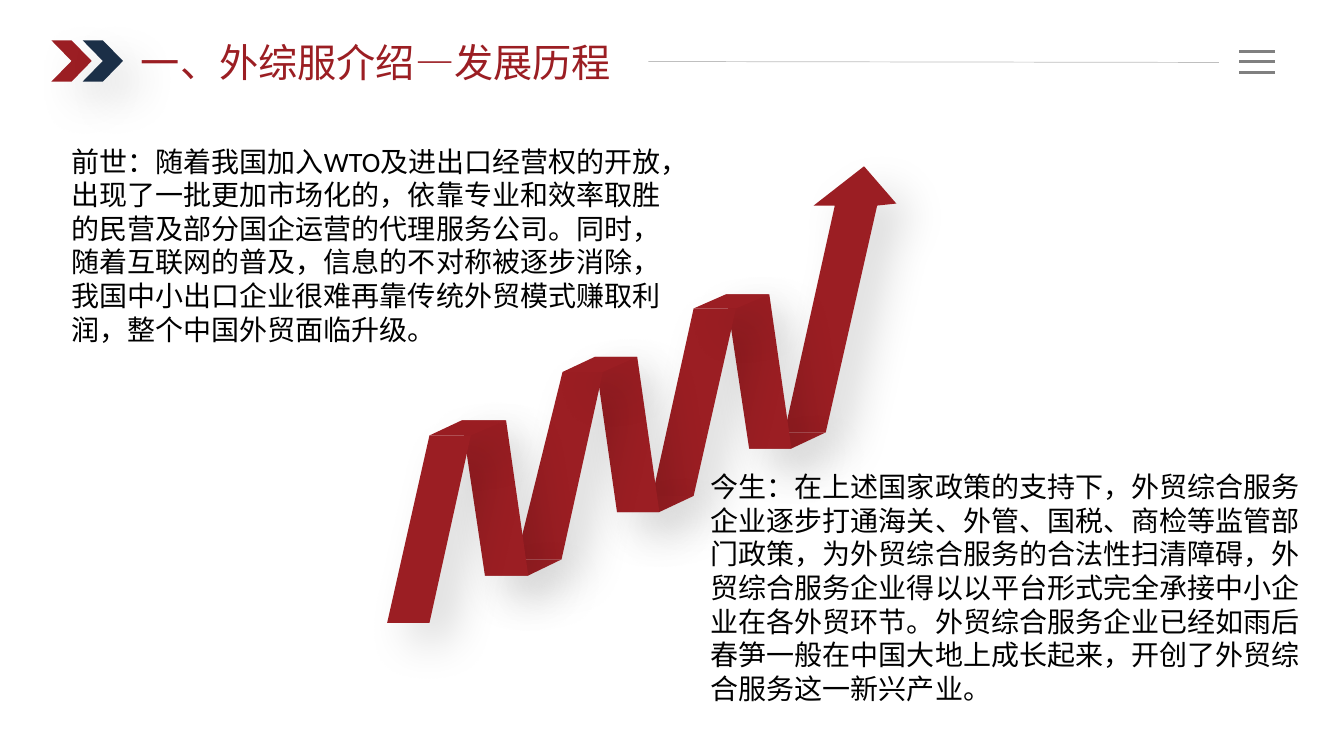
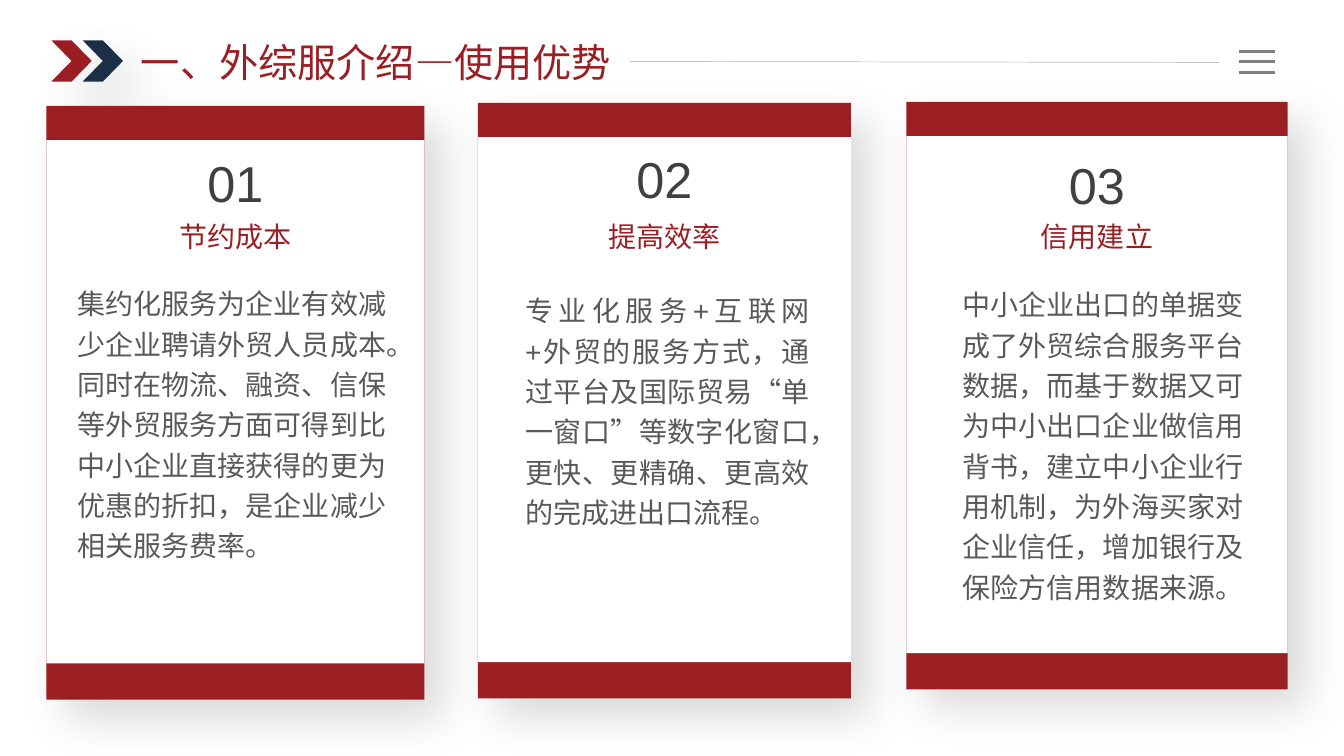
from lxml import etree
from pptx import Presentation
from pptx.dml.color import RGBColor
from pptx.enum import shapes, text
from pptx.oxml import ns
from pptx.util import Inches, Pt

COLORS = {"red": "9B1E23", "navy": "1B2F47", "white": "FFFFFF", "black": "000000",
          "rule": "BFBFBF", "menu": "808080", "body": "595959", "number": "404040"}

STYLES = {
    "title": {"size": 28, "name": "Arial", "color": "red"},
    "history": {"size": 20, "name": "Calibri", "color": "black"},
    "number": {"size": 36, "name": "Arial", "color": "number"},
    "label": {"size": 20, "name": "Arial", "color": "red"},
    "detail": {"size": 20, "name": "Arial", "color": "body"},
}
CENTER = {"alignment": text.PP_ALIGN.CENTER, "line_spacing": 1.2}
JUSTIFY = {"alignment": text.PP_ALIGN.JUSTIFY, "line_spacing": 1.2}

# Panels of the rising ribbon, from back to front, relative to its top left corner
RIBBON = [
    [(3.94, 2.64), (4.44, 0.39), (4.23, 0.39), (4.73, 0), (5.05, 0.37), (4.86, 0.39), (4.35, 2.64)],
    [(4.35, 2.64), (3.94, 2.64), (3.59, 2.8), (4.01, 2.8)],
    [(3.36, 1.27), (3.79, 1.27), (4.01, 2.8), (3.59, 2.8)],
    [(2.63, 3.27), (3.04, 1.41), (3.46, 1.41), (3.04, 3.27)],
    [(3.04, 3.27), (2.63, 3.27), (2.28, 3.43), (2.7, 3.43)],
    [(2.28, 3.43), (2.7, 3.43), (2.48, 1.89), (2.06, 1.89)],
    [(1.73, 3.9), (1.28, 3.9), (1.74, 2.04), (2.14, 2.04)],
    [(0.97, 4.06), (1.28, 3.9), (1.73, 3.9), (1.4, 4.06)],
    [(0.74, 2.52), (0.97, 4.06), (1.4, 4.06), (1.18, 2.52)],
    [(0.83, 2.67), (0.42, 2.67), (0.74, 2.52), (1.18, 2.52)],
    [(0, 4.53), (0.42, 4.53), (0.83, 2.67), (0.42, 2.67)],
    [(1.74, 2.04), (2.14, 2.04), (2.48, 1.89), (2.06, 1.89)],
    [(3.04, 1.41), (3.46, 1.41), (3.79, 1.27), (3.36, 1.27)],
]

HISTORY = [
    ((0.61, 1.38, 6.26, 2.12),
     "前世：随着我国加入WTO及进出口经营权的开放，出现了一批更加市场化的，依靠专业和效率取胜的民营及"
     "部分国企运营的代理服务公司。同时，随着互联网的普及，信息的不对称被逐步消除，我国中小出口企业很难"
     "再靠传统外贸模式赚取利润，整个中国外贸面临升级。"),
    ((6.95, 4.61, 6.26, 2.46),
     "今生：在上述国家政策的支持下，外贸综合服务企业逐步打通海关、外管、国税、商检等监管部门政策，为外贸"
     "综合服务的合法性扫清障碍，外贸综合服务企业得以以平台形式完全承接中小企业在各外贸环节。外贸综合服务"
     "企业已经如雨后春笋一般在中国大地上成长起来，开创了外贸综合服务这一新兴产业。"),
]

# Card boxes are absolute; the other places are relative to the card
ADVANTAGES = [
    {"box": (0.46, 1.05, 3.75, 5.89), "number": "01", "number_top": 0.29, "label": "节约成本",
     "label_top": 1.01, "detail_box": (0.21, 1.68, 3.26, 2.93), "format": JUSTIFY,
     "detail": "集约化服务为企业有效减少企业聘请外贸人员成本。同时在物流、融资、信保等外贸服务方面可得到比"
               "中小企业直接获得的更为优惠的折扣，是企业减少相关服务费率。"},
    {"box": (4.74, 1.02, 3.7, 5.91), "number": "02", "number_top": 0.28, "label": "提高效率",
     "label_top": 1.04, "detail_box": (0.37, 1.78, 3.02, 2.52), "format": JUSTIFY,
     "detail": "专业化服务+互联网+外贸的服务方式，通过平台及国际贸易“单一窗口”等数字化窗口，更快、更精确、"
               "更高效的完成进出口流程。"},
    {"box": (8.99, 1.01, 3.78, 5.83), "number": "03", "number_top": 0.35, "label": "信用建立",
     "label_top": 1.05, "detail_box": (0.34, 1.73, 3.22, 3.33), "format": CENTER,
     "detail": "中小企业出口的单据变成了外贸综合服务平台数据，而基于数据又可为中小出口企业做信用背书，建立"
               "中小企业行用机制，为外海买家对企业信任，增加银行及保险方信用数据来源。"},
]


def rgb(color):
    return RGBColor.from_string(COLORS[color])


def paint(shape, color, shadow=True):
    shape.fill.solid()
    shape.fill.fore_color.rgb = rgb(color)
    shape.line.fill.background()
    shape.shadow.inherit = False
    if shadow:
        effects = shape._element.spPr.find(ns.qn("a:effectLst"))
        outer = etree.SubElement(effects, ns.qn("a:outerShdw"), blurRad=str(Pt(32)),
                                 dist=str(Pt(19)), dir="2700000", algn="tl", rotWithShape="0")
        tint = etree.SubElement(outer, ns.qn("a:srgbClr"), val=COLORS["black"])
        etree.SubElement(tint, ns.qn("a:alpha"), val="14000")


def add_block(slide, kind, box, color, shadow=True):
    block = slide.shapes.add_shape(kind, *map(Inches, box))
    paint(block, color, shadow)


def add_rule(slide, start, end, color, width):
    rule = slide.shapes.add_connector(shapes.MSO_CONNECTOR.STRAIGHT, *map(Inches, start + end))
    rule.line.color.rgb = rgb(color)
    rule.line.width = Pt(width)
    etree.SubElement(rule._element.spPr, ns.qn("a:effectLst"))


def add_text(slide, box, wording, style, paragraph_format=None, wrap=True):
    frame = slide.shapes.add_textbox(*map(Inches, box)).text_frame
    frame.word_wrap = wrap
    frame.auto_size = text.MSO_AUTO_SIZE.SHAPE_TO_FIT_TEXT
    paragraph = frame.paragraphs[0]
    for key, value in (paragraph_format or {}).items():
        setattr(paragraph, key, value)
    run = paragraph.add_run()
    run.text = wording
    look = STYLES[style]
    for key, value in {"size": Pt(look["size"]), "name": look["name"]}.items():
        setattr(run.font, key, value)
    run.font.color.rgb = rgb(look["color"])
    run._r.get_or_add_rPr().set("lang", "zh-CN")


def add_header(slide, title, title_width, wrap=True):
    left, top = 0.51, 0.4
    for offset, color in ((0, "red"), (0.31, "navy")):
        add_block(slide, shapes.MSO_SHAPE.CHEVRON, (left + offset, top, 0.4, 0.41), color)
    title_left = left + 0.79
    add_rule(slide, (title_left + title_width, 0.61), (12.09, 0.62), "rule", 0.5)
    for y in (0.51, 0.61, 0.72):
        add_rule(slide, (12.29, y), (12.65, y), "menu", 2.25)
    add_text(slide, (title_left, 0.33, title_width, 0.57), title, "title", wrap=wrap)


def add_ribbon(slide, left, top):
    for panel in RIBBON:
        first, *rest = [(Inches(left + x), Inches(top + y)) for x, y in panel]
        outline = slide.shapes.build_freeform(*first)
        outline.add_line_segments(rest, close=True)
        paint(outline.convert_to_shape(), "red")


def add_card(slide, card):
    left, top, width, height = card["box"]
    top_band, bottom_band = 0.34, 0.36
    rectangle = shapes.MSO_SHAPE.RECTANGLE
    add_block(slide, rectangle, card["box"], "red")
    add_block(slide, rectangle, (left, top + top_band, width, height - top_band - bottom_band),
              "white", shadow=False)
    x, y, detail_width, detail_height = card["detail_box"]
    add_text(slide, (left + x, top + y, detail_width, detail_height), card["detail"],
             "detail", card["format"])
    for part, part_height in (("label", 0.47), ("number", 1.06)):
        add_text(slide, (left, top + card[part + "_top"], width, part_height), card[part],
                 part, CENTER)


def build_history(slide):
    add_header(slide, "一、外综服介绍—发展历程", 5.13)
    add_ribbon(slide, 3.84, 1.65)
    for box, wording in HISTORY:
        add_text(slide, box, wording, "history")


def build_advantages(slide):
    add_header(slide, "一、外综服介绍—使用优势", 4.95, wrap=False)
    for card in ADVANTAGES:
        add_card(slide, card)


def main():
    deck = Presentation()
    deck.slide_width, deck.slide_height = Inches(13.33), Inches(7.5)
    for build in (build_history, build_advantages):
        build(deck.slides.add_slide(deck.slide_layouts[6]))
    deck.save("out.pptx")


if __name__ == "__main__":
    main()
